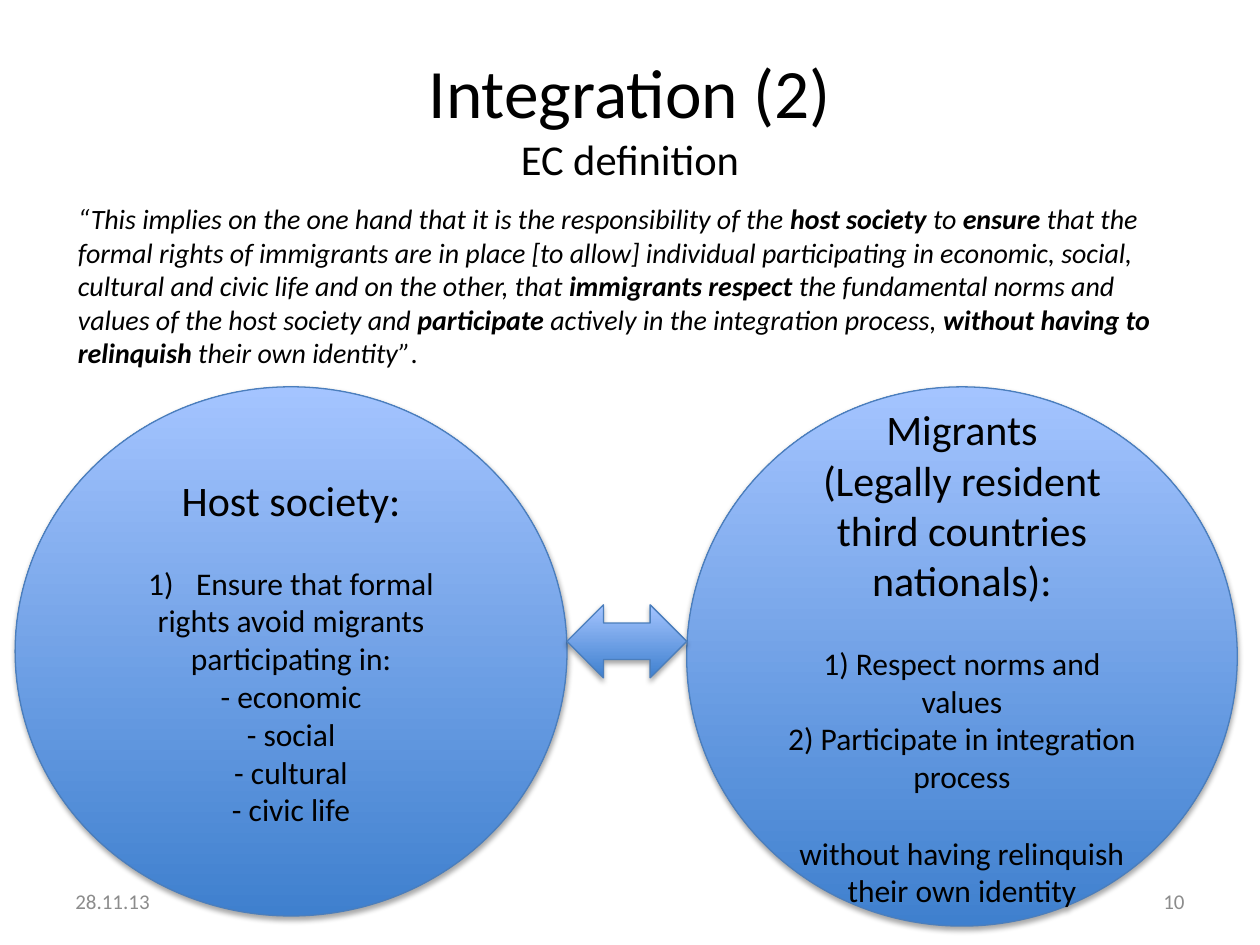
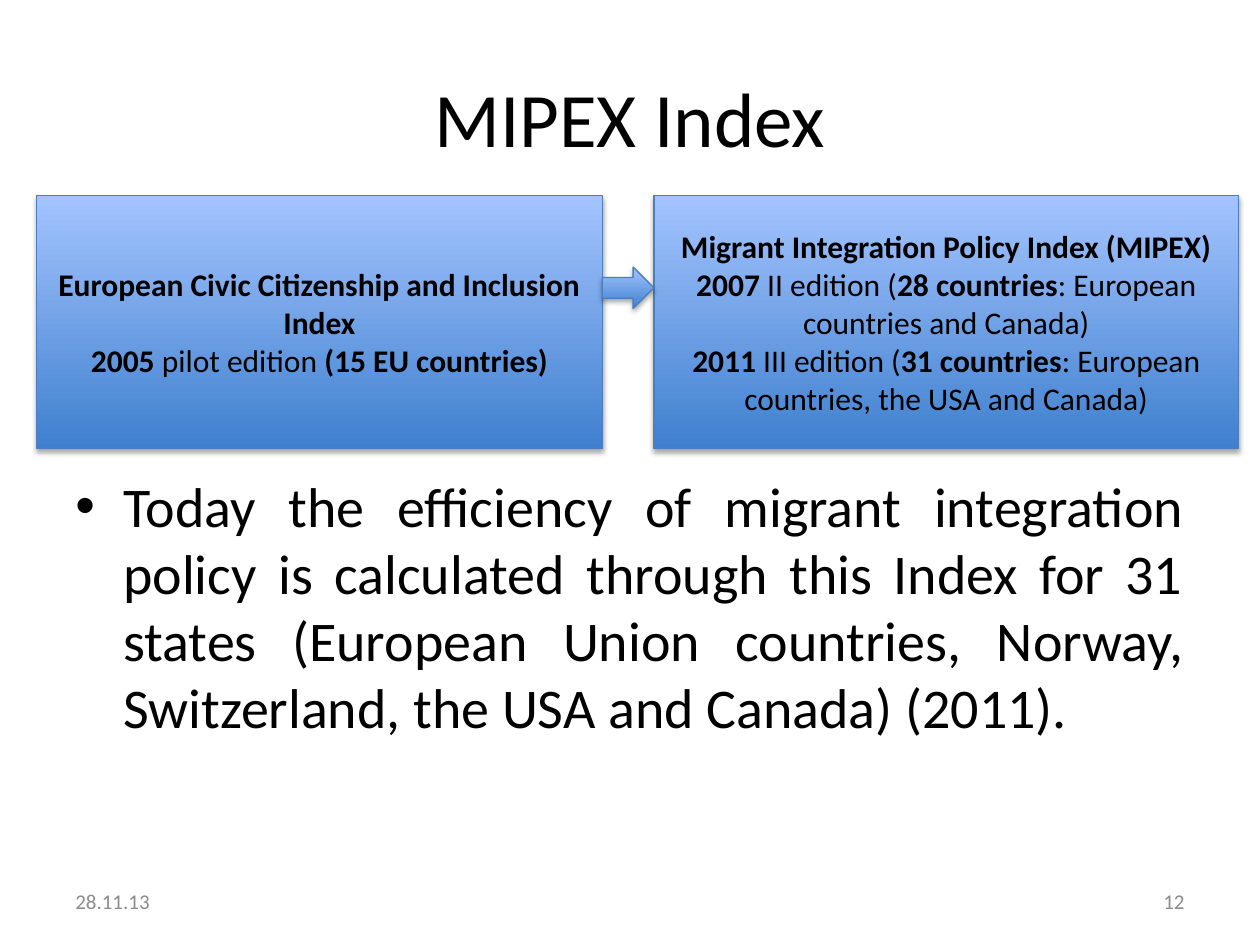
from lxml import etree
from pptx import Presentation
from pptx.dml.color import RGBColor
from pptx.enum import shapes, text
from pptx.oxml import ns
from pptx.util import Inches, Pt

COLORS = {
    "text": "000000",
    "footer": "8C8C8C",
    "grad_bottom": "3F80CE",
    "grad_top": "A4C4FF",
    "outline": "4B7EBC",
    "shadow": "000000",
}
FONT = "Calibri"
DATE = "28.11.13"
TITLE_BOX = (0.5, 0.3, 9, 1.25)
FOOTER_TOP, FOOTER_W, FOOTER_H = 6.95, 2.33, 0.4
BLANK_LINE = 22
HANG = 0.38
ALIGN = text.PP_ALIGN
SHAPE = shapes.MSO_SHAPE


def rgb(name):
    return RGBColor.from_string(COLORS[name])


def sub(parent, tag, **attrs):
    return etree.SubElement(parent, ns.qn(tag), attrs)


def add_runs(p, marked, size, color="text", italic=False):
    """Add runs to a paragraph; stretches between asterisks are bold."""
    for i, part in enumerate(marked.split("*")):
        if not part:
            continue
        r = p.add_run()
        r.text = part
        fmt = {"name": FONT, "size": Pt(size), "bold": i % 2 == 1, "italic": italic}
        for key, value in fmt.items():
            setattr(r.font, key, value)
        r.font.color.rgb = rgb(color)


def add_bullet(p, tag, **attrs):
    pPr = p._p.get_or_add_pPr()
    pPr.set("marL", str(Inches(HANG)))
    pPr.set("indent", str(-Inches(HANG)))
    sub(pPr, "a:buFont", typeface="Arial" if tag == "a:buChar" else "+mj-lt")
    sub(pPr, tag, **attrs)


def add_text(slide, box, align=ALIGN.LEFT, anchor=text.MSO_ANCHOR.TOP):
    """Add a wrapping text box and return its first paragraph."""
    tf = slide.shapes.add_textbox(*map(Inches, box)).text_frame
    tf.word_wrap = True
    tf.vertical_anchor = anchor
    p = tf.paragraphs[0]
    p.alignment = align
    return p


def add_title(slide, lines):
    p = add_text(slide, TITLE_BOX, ALIGN.CENTER, text.MSO_ANCHOR.MIDDLE)
    for i, (line, size) in enumerate(lines):
        if i:
            p.add_line_break()
        add_runs(p, line, size)


def add_footer(slide, number):
    for left, label, align in ((0.5, DATE, ALIGN.LEFT), (7.17, number, ALIGN.RIGHT)):
        box = (left, FOOTER_TOP, FOOTER_W, FOOTER_H)
        p = add_text(slide, box, align, text.MSO_ANCHOR.MIDDLE)
        add_runs(p, label, 12, "footer")


def add_block(slide, kind, box, lines=()):
    """Add a gradient shape; each line is (text, size, space before, numbered)."""
    sp = slide.shapes.add_shape(kind, *map(Inches, box))
    # Gradient and outline
    sp.fill.gradient()
    sp.fill.gradient_angle = 90
    for stop, name in zip(sp.fill.gradient_stops, ("grad_bottom", "grad_top")):
        stop.color.rgb = rgb(name)
    sp.line.color.rgb = rgb("outline")
    sp.line.width = Pt(0.75)
    # Soft shadow below the shape
    sp.shadow.inherit = False
    effects = sp._element.spPr.find(ns.qn("a:effectLst"))
    outer = sub(effects, "a:outerShdw", blurRad=str(Pt(3.1)), dist=str(Pt(1.8)),
                dir="5400000", rotWithShape="0")
    color = sub(outer, "a:srgbClr", val=COLORS["shadow"])
    sub(color, "a:alpha", val="35000")
    # Centred text
    tf = sp.text_frame
    tf.word_wrap = True
    tf.vertical_anchor = text.MSO_ANCHOR.MIDDLE
    for i, (line, size, before, numbered) in enumerate(lines):
        p = tf.add_paragraph() if i else tf.paragraphs[0]
        p.alignment = ALIGN.CENTER
        p.space_before = Pt(before)
        if numbered:
            add_bullet(p, "a:buAutoNum", type="arabicParenR")
        add_runs(p, line, size)


def heading(line):
    return line, 24, 0, False


def item(line, before=0, numbered=False):
    return line, 18, before, numbered


def add_pair(slide, kind, left_box, right_box, left_lines, right_lines,
             arrow, arrow_top, arrow_h):
    """Two blocks with an arrow filling the gap between them."""
    add_block(slide, kind, left_box, left_lines)
    add_block(slide, kind, right_box, right_lines)
    gap_left = left_box[0] + left_box[2]
    add_block(slide, arrow, (gap_left, arrow_top, right_box[0] - gap_left, arrow_h))


def integration_slide(prs):
    slide = prs.slides.add_slide(prs.slide_layouts[6])
    add_title(slide, [("Integration (2)", 39.6), ("EC definition", 24.3)])

    # Quotation
    p = add_text(slide, (0.52, 1.55, 9, 1.68))
    p.space_before = Pt(3.2)
    add_runs(p, "“This implies on the one hand that it is the responsibility of the "
             "*host society* to *ensure* that the formal rights of immigrants are in "
             "place [to allow] individual participating in economic, social, cultural "
             "and civic life and on the other, that *immigrants respect *the "
             "fundamental norms and values of the host society and *participate* "
             "actively in the integration process, *without having to relinquish* "
             "their own identity”", 16, italic=True)
    add_runs(p, ".", 16)
    add_footer(slide, "10")

    # Two sides of integration
    host = [heading("Host society:"),
            item("Ensure that formal", BLANK_LINE, True),
            item("rights avoid migrants participating in:")]
    host += [item(f"- {area}") for area in ("economic", "social", "cultural", "civic life")]
    migrants = [heading("Migrants"),
                heading("(Legally resident third countries nationals):"),
                item("1) Respect norms and values", BLANK_LINE),
                item("2) Participate in integration process"),
                item("without having relinquish their own identity", BLANK_LINE)]
    add_pair(slide, SHAPE.OVAL, (0.12, 3.07, 4.38, 4.2), (5.45, 3.07, 4.37, 4.28),
             host, migrants, SHAPE.LEFT_RIGHT_ARROW, 4.8, 0.58)


def index_slide(prs):
    slide = prs.slides.add_slide(prs.slide_layouts[6])
    add_title(slide, [("MIPEX Index", 44)])

    # Bulleted statement
    p = add_text(slide, (0.5, 3.69, 9, 3.14), ALIGN.JUSTIFY)
    p.space_before = Pt(6.4)
    add_bullet(p, "a:buChar", char="•")
    add_runs(p, "Today the efficiency of migrant integration policy is calculated "
             "through this Index for 31 states (European Union countries, Norway, "
             "Switzerland, the USA and Canada) (2011).", 32)
    add_footer(slide, "12")

    # From the pilot to the later editions
    pilot = [item("*European Civic Citizenship and Inclusion Index*"),
             item("*2005 *pilot edition *(15 EU countries)*")]
    editions = [item("*Migrant Integration Policy Index (MIPEX)*"),
                item("*2007 *II edition (*28 countries*: European countries and Canada)"),
                item("*2011 *III edition (*31 countries*: European countries, "
                     "the USA and Canada)")]
    add_pair(slide, SHAPE.RECTANGLE, (0.29, 1.55, 4.49, 2.01), (5.19, 1.55, 4.64, 2.01),
             pilot, editions, SHAPE.RIGHT_ARROW, 2.12, 0.33)


def main():
    prs = Presentation()
    prs.slide_width, prs.slide_height = Inches(10), Inches(7.5)
    integration_slide(prs)
    index_slide(prs)
    prs.save("out.pptx")


if __name__ == "__main__":
    main()
